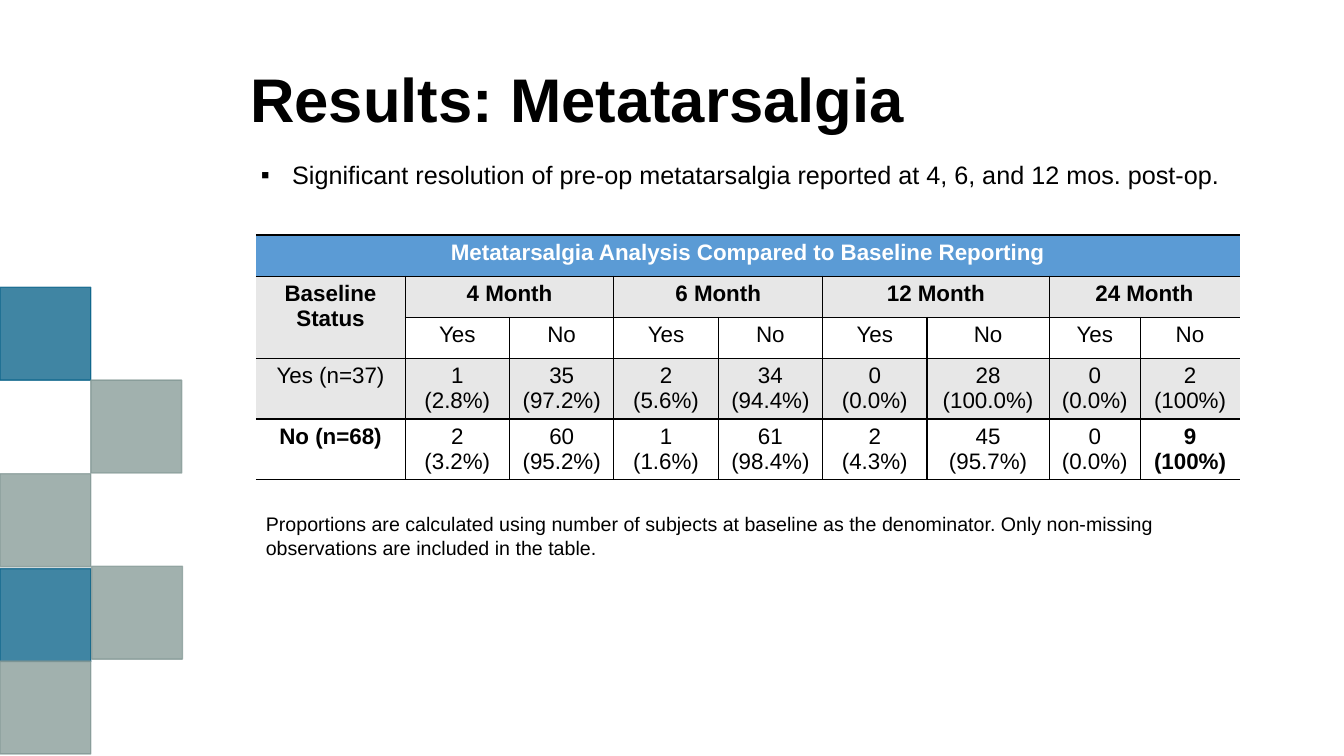
from lxml import etree
from pptx import Presentation
from pptx.dml.color import RGBColor
from pptx.enum.shapes import MSO_SHAPE as Preset
from pptx.enum.text import MSO_ANCHOR as Anchor, MSO_AUTO_SIZE as AutoSize, PP_ALIGN as Align
from pptx.oxml import parse_xml
from pptx.oxml.ns import nsdecls, qn
from pptx.util import Cm, Pt

COLORS = {
    "black": "000000", "white": "FFFFFF", "blue": "005D85", "sage": "829794",
    "banner": "5B9BD5", "gray": "E7E7E7",
}


def add_run(paragraph, text, size, bold=False, color="black"):
    run = paragraph.add_run()
    run.text = text
    run.font.name = "Arial"
    run.font.size = Pt(size)
    run.font.bold = bold
    run.font.color.rgb = RGBColor.from_string(COLORS[color])


def add_border(cell, side, visible):
    paint = f'<a:solidFill><a:srgbClr val="{COLORS["black"]}"/></a:solidFill>' if visible else "<a:noFill/>"
    line = f'<a:{side} {nsdecls("a")} w="{Pt(1)}">{paint}</a:{side}>'
    cell._tc.get_or_add_tcPr().append(parse_xml(line))


presentation = Presentation()
presentation.slide_width = Cm(33.87)
presentation.slide_height = Cm(19.05)
slide = presentation.slides.add_slide(presentation.slide_layouts[1])

squares = [
    (0, 7.24, "blue"), (0, 14.33, "blue"), (0, 16.66, "sage"),
    (2.29, 9.58, "sage"), (2.31, 14.27, "sage"), (0, 11.94, "sage"),
]
for left, top, color in squares:
    square = slide.shapes.add_shape(Preset.RECTANGLE, Cm(left), Cm(top), Cm(2.29), Cm(2.34))
    square.shadow.inherit = False
    square.fill.solid()
    square.fill.fore_color.rgb = RGBColor.from_string(COLORS[color])
    square.line.color.rgb = RGBColor.from_string(COLORS[color])
    square.line.width = Pt(1)
    for paint in square._element.spPr.iter(qn("a:srgbClr")):
        etree.SubElement(paint, qn("a:alpha"), val="75000")

title = slide.shapes.title
title.left, title.top, title.width, title.height = Cm(6.05), Cm(1.3), Cm(25.5), Cm(2.59)
title.text_frame.vertical_anchor = Anchor.MIDDLE
paragraph = title.text_frame.paragraphs[0]
paragraph.alignment = Align.LEFT
paragraph.line_spacing = 0.9
add_run(paragraph, "Results: Metatarsalgia", 44, bold=True)

body = slide.placeholders[1]
body.left, body.top, body.width, body.height = Cm(6.32), Cm(3.89), Cm(25.22), Cm(1.02)
body.text_frame.auto_size = AutoSize.NONE
paragraph = body.text_frame.paragraphs[0]
paragraph.space_before = Pt(0)
properties = paragraph._p.get_or_add_pPr()
properties.set("marL", str(Cm(0.79)))
properties.set("indent", str(-Cm(0.79)))
etree.SubElement(properties, qn("a:buFont"), typeface="Arial")
etree.SubElement(properties, qn("a:buChar"), char="▪")
add_run(paragraph, "Significant resolution of pre-op metatarsalgia reported at 4, 6, and 12 mos. post-op.", 18)

rows = [
    ["Metatarsalgia Analysis Compared to Baseline Reporting"] + [""] * 8,
    ["Baseline Status", "4 Month", "", "6 Month", "", "12 Month", "", "24 Month", ""],
    [""] + ["Yes", "No"] * 4,
    ["Yes (n=37)", "1 (2.8%)", "35 (97.2%)", "2 (5.6%)", "34 (94.4%)",
     "0 (0.0%)", "28 (100.0%)", "0\n(0.0%)", "2\n(100%)"],
    ["No (n=68)", "2 (3.2%)", "60 (95.2%)", "1 (1.6%)", "61 (98.4%)",
     "2 (4.3%)", "45 (95.7%)", "0\n(0.0%)", "9\n(100%)"],
]
row_fills = ["banner", "gray", "white", "gray", "white"]
row_heights = [1.04, 1.04, 1.04, 1.52, 1.52]
column_widths = [3.76, 2.63, 2.63, 2.63, 2.63, 2.63, 3.08, 2.3, 2.5]
bold_cells = {(4, 0), (4, 8)}

frame = slide.shapes.add_table(
    len(rows), len(column_widths), Cm(6.45), Cm(5.92), Cm(sum(column_widths)), Cm(sum(row_heights)))
table = frame.table
table.first_row = False
table.horz_banding = False
for column, width in zip(table.columns, column_widths):
    column.width = Cm(width)
for row, height in zip(table.rows, row_heights):
    row.height = Cm(height)

table.cell(0, 0).merge(table.cell(0, 8))
table.cell(1, 0).merge(table.cell(2, 0))
for month in range(1, 9, 2):
    table.cell(1, month).merge(table.cell(1, month + 1))

for row_index, texts in enumerate(rows):
    for column_index, text in enumerate(texts):
        cell = table.cell(row_index, column_index)
        if cell.is_spanned:
            continue
        span = cell.span_width if cell.is_merge_origin else 1
        add_border(cell, "lnL", column_index > 0)
        add_border(cell, "lnR", column_index + span < len(column_widths))
        add_border(cell, "lnT", True)
        add_border(cell, "lnB", True)
        fill = "gray" if (row_index, column_index) == (2, 0) else row_fills[row_index]
        cell.fill.solid()
        cell.fill.fore_color.rgb = RGBColor.from_string(COLORS[fill])
        bold = row_index < 2 or (row_index, column_index) in bold_cells
        for index, line in enumerate(text.split("\n")):
            paragraph = cell.text_frame.add_paragraph() if index else cell.text_frame.paragraphs[0]
            paragraph.alignment = Align.CENTER
            add_run(paragraph, line, 16, bold, "black" if row_index else "white")

note = slide.shapes.add_textbox(Cm(6.45), Cm(12.78), Cm(24.26), Cm(1.45))
note.text_frame.word_wrap = True
add_run(
    note.text_frame.paragraphs[0],
    "Proportions are calculated using number of subjects at baseline as the denominator. "
    "Only non-missing observations are included in the table.", 14)

presentation.save("out.pptx")
